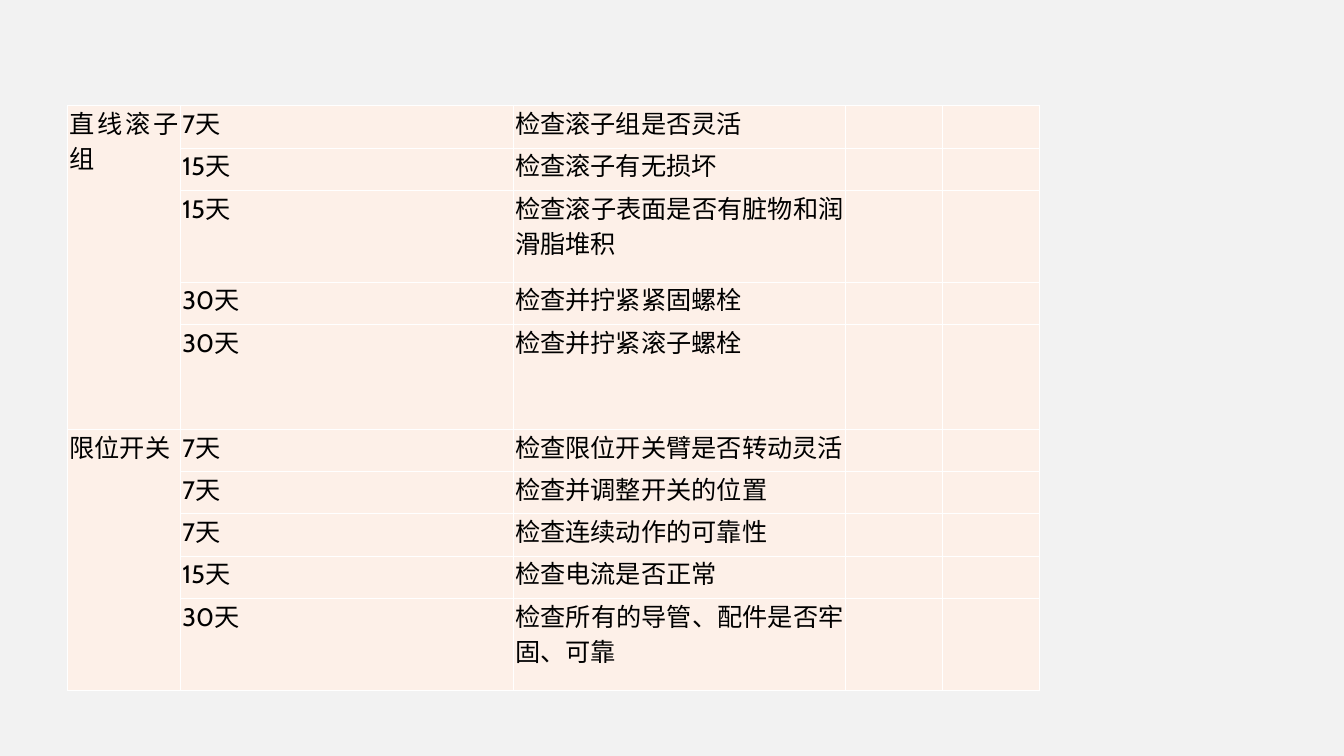
from dataclasses import dataclass

from lxml import etree
from pptx import Presentation
from pptx import util as u
from pptx.dml.color import RGBColor
from pptx.enum import text
from pptx.oxml.ns import qn

PX = 9144  # EMU per px, 100 px to the inch
BACKGROUND, CELL_FILL, BORDER, INK = "F2F2F2", "FDF0E8", "FFFFFF", "000000"
FONT = "Cabin"
TABLE_LEFT, TABLE_TOP = 67, 105
COLUMN_WIDTHS = (112, 330, 330, 96, 96)
CELL_INSET = 2
ONE_LINE, TWO_LINES, GROUP_END = 42, 91, 104


@dataclass(frozen=True)
class Check:
    days: int
    task: str
    height: int = ONE_LINE


@dataclass(frozen=True)
class Part:
    name: str
    checks: tuple[Check, ...]


PARTS = (
    Part("直线滚子组", (
        Check(7, "检查滚子组是否灵活"),
        Check(15, "检查滚子有无损坏"),
        Check(15, "检查滚子表面是否有脏物和润滑脂堆积", TWO_LINES),
        Check(30, "检查并拧紧紧固螺栓"),
        Check(30, "检查并拧紧滚子螺栓", GROUP_END),
    )),
    Part("限位开关", (
        Check(7, "检查限位开关臂是否转动灵活"),
        Check(7, "检查并调整开关的位置"),
        Check(7, "检查连续动作的可靠性"),
        Check(15, "检查电流是否正常"),
        Check(30, "检查所有的导管、配件是否牢固、可靠", TWO_LINES),
    )),
)


def px(length: int) -> u.Emu:
    return u.Emu(length * PX)


def color(value: str) -> RGBColor:
    return RGBColor.from_string(value)


def style_cell(cell) -> None:
    """Give the cell its four borders, then its fill, in schema order."""
    properties = cell._tc.get_or_add_tcPr()
    for side in ("lnL", "lnR", "lnT", "lnB"):
        line = etree.SubElement(properties, qn(f"a:{side}"), w=str(u.Pt(1)))
        fill = etree.SubElement(line, qn("a:solidFill"))
        etree.SubElement(fill, qn("a:srgbClr"), val=BORDER)
    cell.fill.solid()
    cell.fill.fore_color.rgb = color(CELL_FILL)


def write_cell(cell, words: str) -> None:
    cell.margin_left = cell.margin_right = px(CELL_INSET)
    cell.margin_top = cell.margin_bottom = 0
    para = cell.text_frame.paragraphs[0]
    para.alignment = text.PP_ALIGN.JUSTIFY
    para.line_spacing = u.Pt(25)
    span = para.add_run()
    span.text = words
    span.font.name = FONT
    span.font.size = u.Pt(18)
    span.font.color.rgb = color(INK)


def add_schedule(page, parts: tuple[Part, ...]) -> None:
    checks = [check for part in parts for check in part.checks]
    frame = page.shapes.add_table(
        len(checks), len(COLUMN_WIDTHS), px(TABLE_LEFT), px(TABLE_TOP),
        px(sum(COLUMN_WIDTHS)), px(sum(check.height for check in checks)))
    table = frame.table
    table.first_row = table.horz_banding = False
    for column, width in zip(table.columns, COLUMN_WIDTHS):
        column.width = px(width)
    for cell in table.iter_cells():
        style_cell(cell)
    for index, check in enumerate(checks):
        table.rows[index].height = px(check.height)
        write_cell(table.cell(index, 1), f"{check.days}天")
        write_cell(table.cell(index, 2), check.task)
    first = 0
    for part in parts:
        last = first + len(part.checks) - 1
        table.cell(first, 0).merge(table.cell(last, 0))
        write_cell(table.cell(first, 0), part.name)
        first = last + 1


def main() -> None:
    deck = Presentation()
    deck.slide_width, deck.slide_height = px(1333), px(750)
    page = deck.slides.add_slide(deck.slide_layouts[6])
    page.background.fill.solid()
    page.background.fill.fore_color.rgb = color(BACKGROUND)
    add_schedule(page, PARTS)
    deck.save("out.pptx")


if __name__ == "__main__":
    main()
